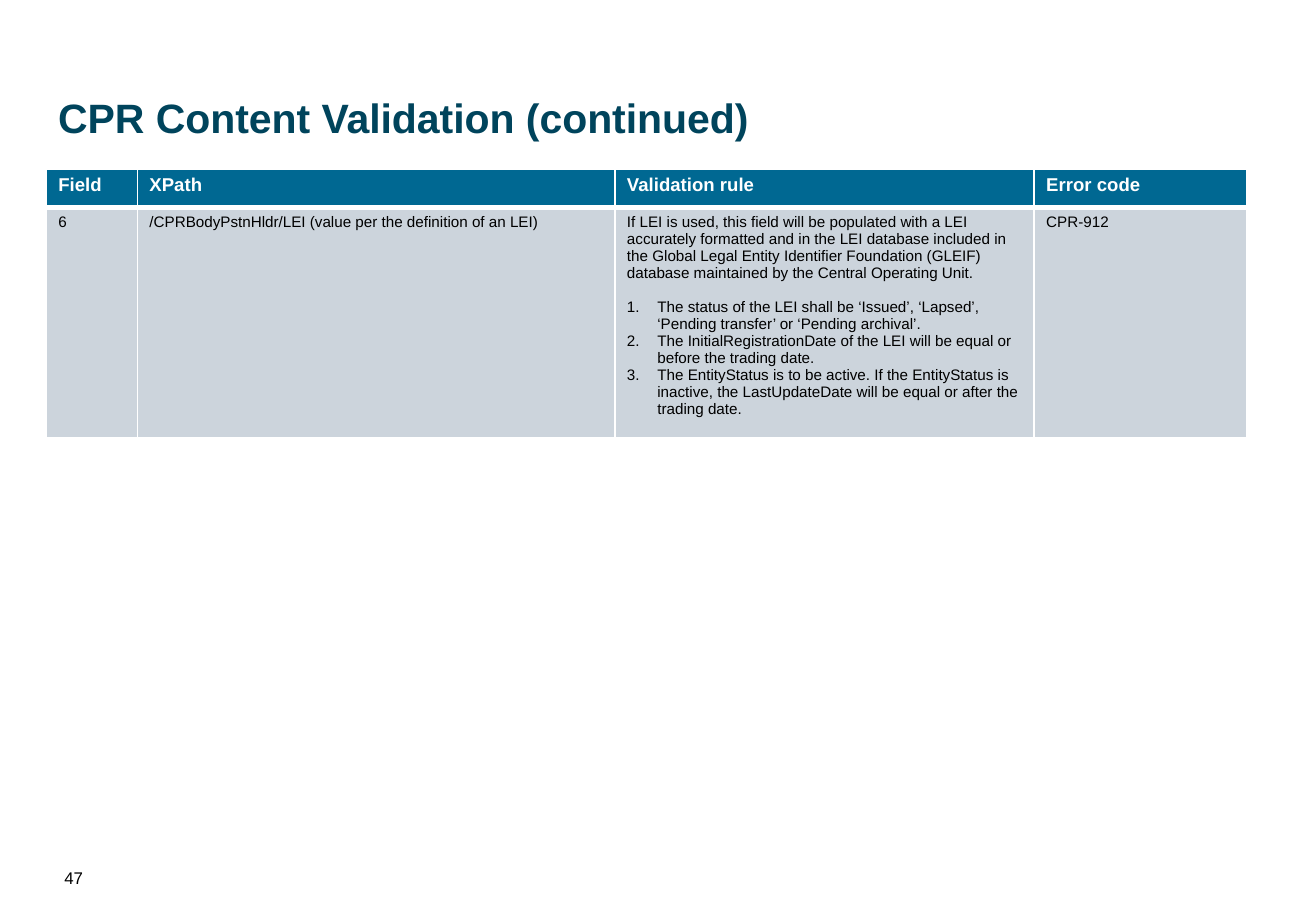
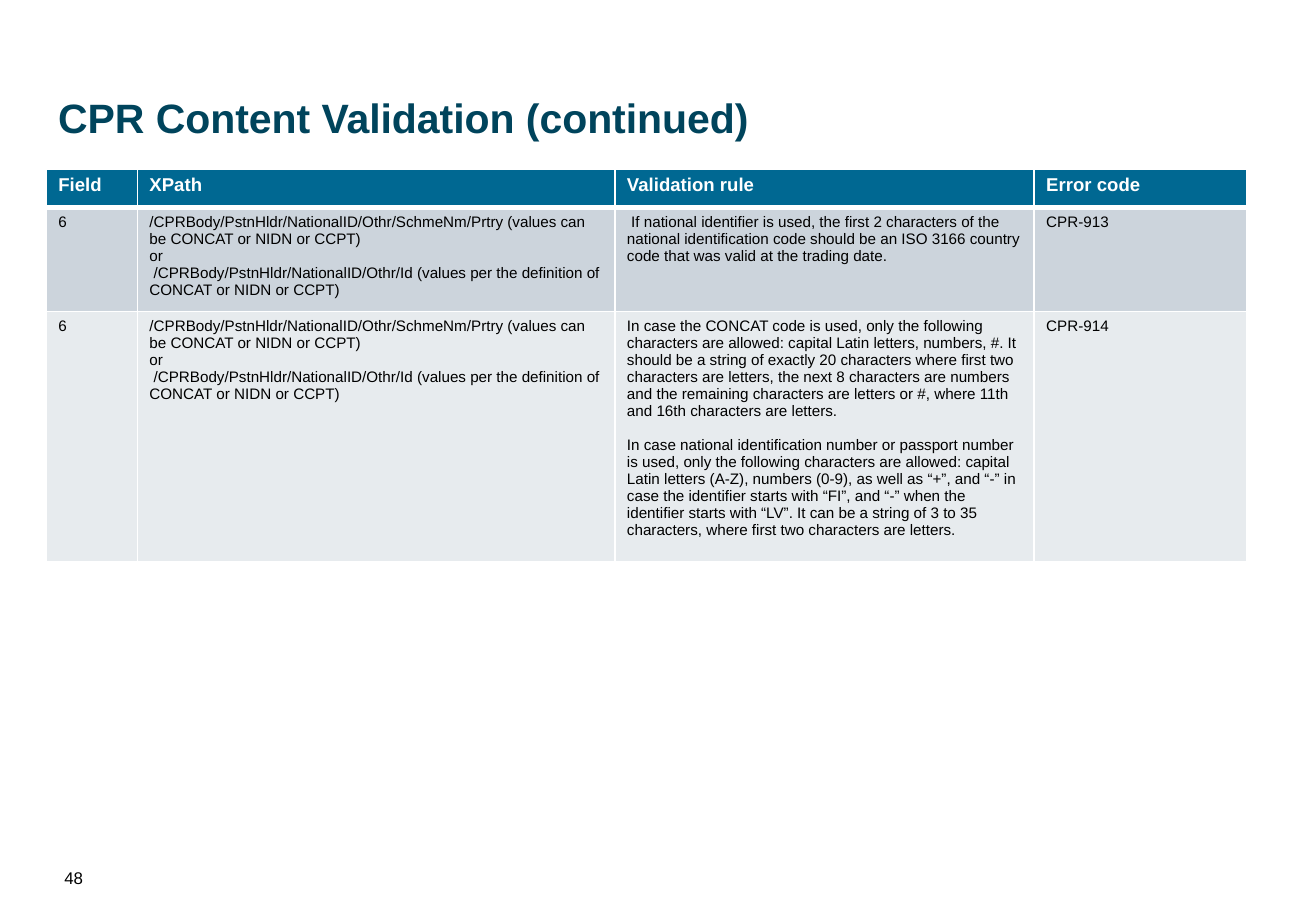
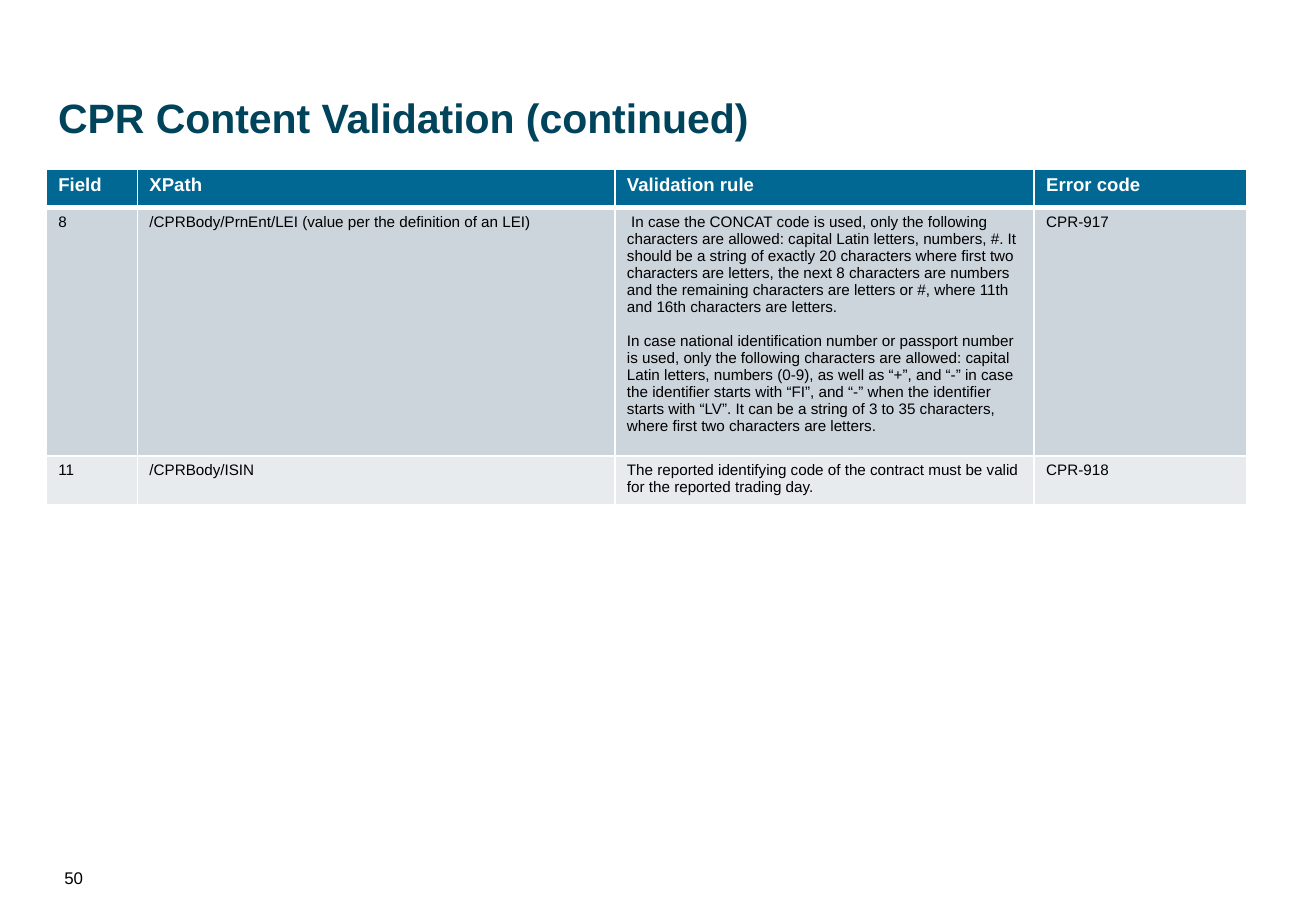
from lxml import etree
from pptx import Presentation
from pptx.dml.color import RGBColor
from pptx.oxml.ns import qn
from pptx.util import Inches, Pt

FONT = "Arial"
TITLE_COLOR = "00445C"
HEADER_FILL = "006892"
BAND_FILLS = ["CCD4DC", "E7EBEE"]
WHITE, BLACK = "FFFFFF", "000000"
TITLE = "CPR Content Validation (continued)"
HEADERS = ["Field", "XPath", "Validation rule", "Error code"]
COLUMN_WIDTHS = [0.75, 3.93, 3.45, 1.75]
HEADER_HEIGHT = 0.32
BLANK_LINE = 10  # points of space between separated paragraphs


def rgb(color):
    return RGBColor.from_string(color)


def border(tc_pr, position, side, width):
    """Put a white edge before the fill of a table cell."""
    ln = etree.Element(qn(f"a:ln{side}"), w=str(Pt(width)))
    fill = etree.SubElement(ln, qn("a:solidFill"))
    etree.SubElement(fill, qn("a:srgbClr"), val=WHITE)
    tc_pr.insert(position, ln)


def number(p):
    """Make the paragraph an item of a numbered list."""
    p_pr = p._p.get_or_add_pPr()
    p_pr.set("marL", str(Inches(0.25)))
    p_pr.set("indent", str(Inches(-0.25)))
    etree.SubElement(p_pr, qn("a:buFont"), typeface="+mj-lt")
    etree.SubElement(p_pr, qn("a:buAutoNum"), type="arabicPeriod")


class Deck:
    def __init__(self):
        self.prs = Presentation()
        self.prs.slide_width, self.prs.slide_height = Inches(10.83), Inches(7.5)
        self.s = None

    def format(self, p, size, color, bold=False):
        for r in p.runs:
            r.font.name, r.font.size, r.font.bold = FONT, Pt(size), bold
            r.font.color.rgb = rgb(color)

    def text(self, content, box, size, color, bold=False, margins=(0, 0)):
        """Add a text box; margins are left and top."""
        tf = self.s.shapes.add_textbox(*map(Inches, box)).text_frame
        tf.word_wrap = True
        tf.margin_left, tf.margin_top = map(Inches, margins)
        tf.margin_right = tf.margin_bottom = 0
        tf.text = content
        self.format(tf.paragraphs[0], size, color, bold)

    def cell(self, cell, content, fill, size, color, bold, top, bottom):
        """Fill a cell; content is a text, or a list of paragraphs where
        None leaves a line's gap and a tuple holds numbered items."""
        cell.fill.solid()
        cell.fill.fore_color.rgb = rgb(fill)
        widths = {"L": 1, "R": 1, "T": top, "B": bottom}
        for position, (side, width) in enumerate(widths.items()):
            border(cell._tc.get_or_add_tcPr(), position, side, width)
        p = None
        for part in [content] if isinstance(content, str) else content:
            if part is None:
                p.space_after = Pt(BLANK_LINE)
                continue
            numbered = isinstance(part, tuple)
            for line in part if numbered else (part,):
                tf = cell.text_frame
                p = tf.add_paragraph() if p is not None else tf.paragraphs[0]
                if numbered:
                    number(p)
                p.text = line
                self.format(p, size, color, bold)

    def table(self, rows, heights):
        heights = [HEADER_HEIGHT, *heights]
        frame = self.s.shapes.add_table(
            len(heights), len(HEADERS), Inches(0.38), Inches(1.39),
            Inches(sum(COLUMN_WIDTHS)), Inches(sum(heights)))
        table = frame.table
        table.first_row = table.horz_banding = False
        for column, width in zip(table.columns, COLUMN_WIDTHS):
            column.width = Inches(width)
        for row, height in zip(table.rows, heights):
            row.height = Inches(height)
        for i, row in enumerate([HEADERS, *rows]):
            if i == 0:
                style = (HEADER_FILL, 11, WHITE, True, 1, 3)
            else:
                style = (BAND_FILLS[(i - 1) % 2], 9, BLACK, False,
                         3 if i == 1 else 1, 1)
            for j, content in enumerate(row):
                self.cell(table.cell(i, j), content, *style)

    def slide(self, page, rows, heights):
        self.s = self.prs.slides.add_slide(self.prs.slide_layouts[6])
        self.text(TITLE, (0.38, 0.68, 9.54, 0.63), 24.3, TITLE_COLOR, True,
                  margins=(0.1, 0.08))
        self.table(rows, heights)
        self.text(page, (0.53, 7.14, 0.79, 0.17), 10, BLACK)


NATIONAL_ID_PATHS = [
    "/CPRBody/PstnHldr/NationalID/Othr/SchmeNm/Prtry (values can be CONCAT or NIDN or CCPT)",
    "or",
    " /CPRBody/PstnHldr/NationalID/Othr/Id (values per the definition of CONCAT or NIDN or CCPT)",
]
CONCAT_RULE = (
    "In case the CONCAT code is used, only the following characters are allowed: "
    "capital Latin letters, numbers, #. It should be a string of exactly 20 characters "
    "where first two characters are letters, the next 8 characters are numbers and the "
    "remaining characters are letters or #, where 11th and 16th characters are letters.")


def passport_rule(letters):
    return (
        "In case national identification number or passport number is used, only the "
        f"following characters are allowed: capital {letters}, numbers (0-9), as well as "
        "“+”, and “-” in case the identifier starts with “FI”, and “-” when the identifier "
        "starts with “LV”. It can be a string of 3 to 35 characters, where first two "
        "characters are letters.")


LEI_RULE = [
    "If LEI is used, this field will be populated with a LEI accurately formatted and in "
    "the LEI database included in the Global Legal Entity Identifier Foundation (GLEIF) "
    "database maintained by the Central Operating Unit.",
    None,
    ("The status of the LEI shall be ‘Issued’, ‘Lapsed’, ‘Pending transfer’ or "
     "‘Pending archival’.",
     "The InitialRegistrationDate of the LEI will be equal or before the trading date.",
     "The EntityStatus is to be active. If the EntityStatus is inactive, the "
     "LastUpdateDate will be equal or after the trading date."),
]


def main():
    deck = Deck()
    deck.slide("47", [
        ["6", "/CPRBodyPstnHldr/LEI (value per the definition of an LEI)",
         LEI_RULE, "CPR-912"],
    ], [1.78])
    deck.slide("48", [
        ["6", NATIONAL_ID_PATHS,
         " If national identifier is used, the first 2 characters of the national "
         "identification code should be an ISO 3166 country code that was valid at the "
         "trading date.", "CPR-913"],
        ["6", NATIONAL_ID_PATHS,
         [CONCAT_RULE, None, passport_rule("Latin letters (A-Z)")], "CPR-914"],
    ], [0.8, 2.06])
    deck.slide("50", [
        ["8", "/CPRBody/PrnEnt/LEI (value per the definition of an LEI)",
         [" " + CONCAT_RULE, None, passport_rule("Latin letters")], "CPR-917"],
        ["11", "/CPRBody/ISIN",
         "The reported identifying code of the contract must be valid for the reported "
         "trading day.", "CPR-918"],
    ], [1.92, 0.38])
    deck.prs.save("out.pptx")


if __name__ == "__main__":
    main()
